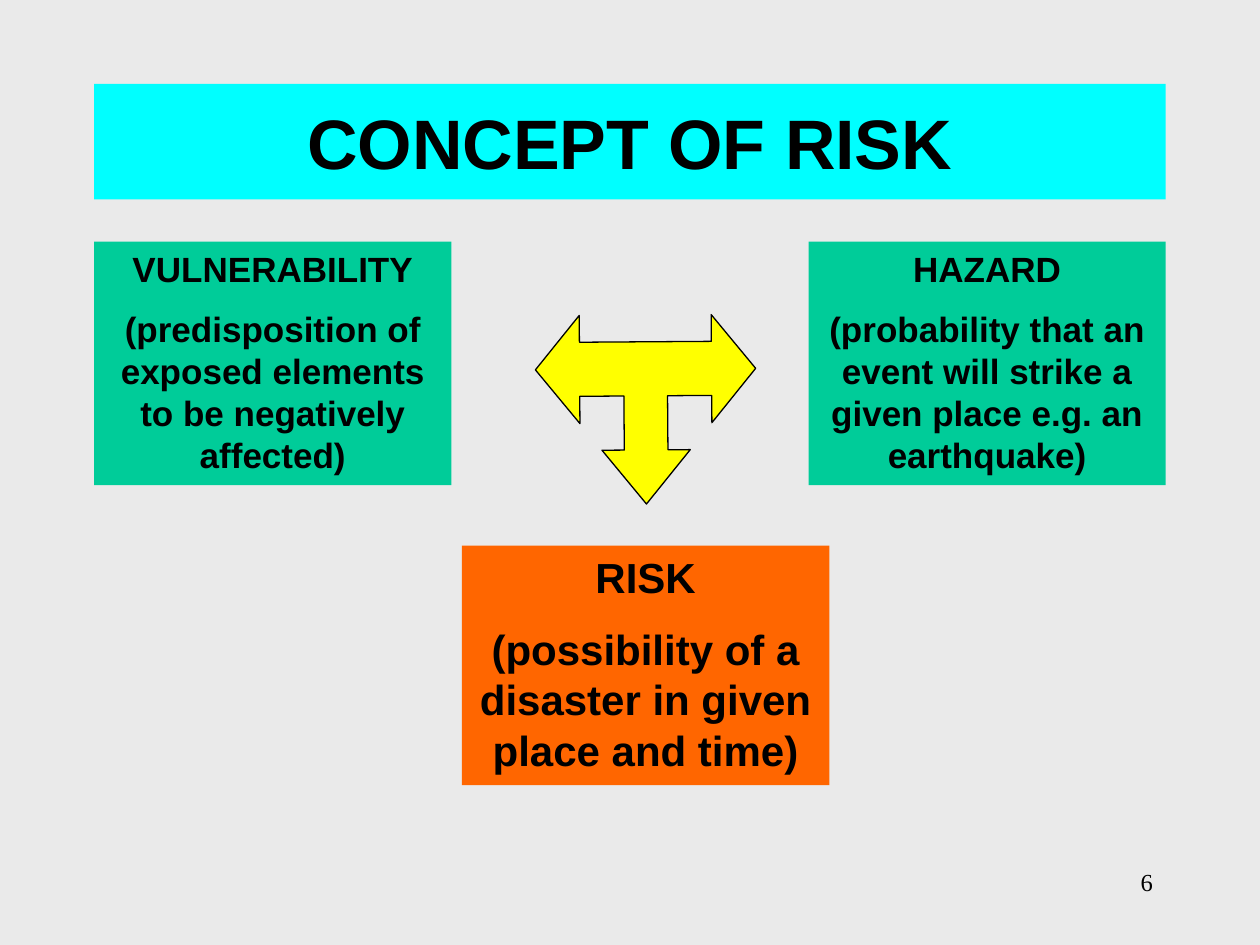
from pptx import Presentation
from pptx.dml.color import RGBColor
from pptx.enum.shapes import MSO_SHAPE
from pptx.enum.text import MSO_ANCHOR, PP_ALIGN
from pptx.util import Cm, Pt

RECTANGLE = MSO_SHAPE.RECTANGLE
TOP, MIDDLE = MSO_ANCHOR.TOP, MSO_ANCHOR.MIDDLE
CENTER, RIGHT = PP_ALIGN.CENTER, PP_ALIGN.RIGHT

BACKGROUND = RGBColor(0xEA, 0xEA, 0xEA)
CYAN = RGBColor(0x00, 0xFF, 0xFF)
GREEN = RGBColor(0x00, 0xCC, 0x99)
ORANGE = RGBColor(0xFF, 0x66, 0x00)
YELLOW = RGBColor(0xFF, 0xFF, 0x00)
BLACK = RGBColor(0x00, 0x00, 0x00)

# Lengths are in centimetres: left, top, width, height.
MARGIN, SLIDE_WIDTH, SLIDE_HEIGHT = 1.9, 25.4, 19.05
FACTOR_TOP, FACTOR_WIDTH, FACTOR_HEIGHT = 4.87, 7.2, 4.91
BOXES = [
    (["CONCEPT OF RISK"], CYAN, 40, MIDDLE,
     (MARGIN, 1.69, SLIDE_WIDTH - 2 * MARGIN, 2.33)),
    (["VULNERABILITY",
      "(predisposition of exposed elements to be negatively affected)"],
     GREEN, 20, TOP, (MARGIN, FACTOR_TOP, FACTOR_WIDTH, FACTOR_HEIGHT)),
    (["HAZARD",
      "(probability that an event will strike a given place e.g. an earthquake)"],
     GREEN, 20, TOP,
     (SLIDE_WIDTH - MARGIN - FACTOR_WIDTH, FACTOR_TOP, FACTOR_WIDTH, FACTOR_HEIGHT)),
    (["RISK", "(possibility of a disaster in given place and time)"],
     ORANGE, 24, TOP, (9.31, 11, 7.41, 4.83)),
]
PAGE_NUMBER, PAGE_NUMBER_PLACE = "6", (18.2, 17.36, 5.29, 1.27)

# Right half of the three-headed arrow: offset from its axis, depth from its top.
ARROW_AXIS, ARROW_TOP, ARROW_TILT = 13.02, 6.35, -0.4
ARROW_HALF = [(0.44, 2.72), (0.44, 1.63), (1.33, 1.63), (1.33, 2.18),
              (2.22, 1.09), (1.33, 0), (1.33, 0.54)]
ARROW_HALF = [(0, 3.81), (0.89, 2.72)] + ARROW_HALF


def write(frame, texts, alignment, **font_format):
    frame.word_wrap = True
    for index, text in enumerate(texts):
        paragraph = frame.paragraphs[0] if index == 0 else frame.add_paragraph()
        paragraph.alignment = alignment
        if index:
            paragraph.space_before = font_format["size"] // 2
        run = paragraph.add_run()
        run.text = text
        run.font.color.rgb = BLACK
        for name, value in font_format.items():
            setattr(run.font, name, value)


def add_box(slide, texts, color, size, anchor, place):
    box = slide.shapes.add_shape(RECTANGLE, *map(Cm, place))
    box.shadow.inherit = False
    box.fill.solid()
    box.fill.fore_color.rgb = color
    box.line.fill.background()
    box.text_frame.vertical_anchor = anchor
    write(box.text_frame, texts, CENTER, size=Pt(size), name="Arial", bold=True)


def add_three_headed_arrow(slide):
    mirrored = [(-offset, depth) for offset, depth in reversed(ARROW_HALF[1:])]
    points = [(Cm(ARROW_AXIS + offset), Cm(ARROW_TOP + depth))
              for offset, depth in ARROW_HALF + mirrored]
    builder = slide.shapes.build_freeform(*points[0])
    builder.add_line_segments(points[1:], close=True)
    arrow = builder.convert_to_shape()
    arrow.shadow.inherit = False
    arrow.rotation = ARROW_TILT
    arrow.fill.solid()
    arrow.fill.fore_color.rgb = YELLOW
    arrow.line.color.rgb = BLACK
    arrow.line.width = Pt(0.75)


def main():
    presentation = Presentation()
    presentation.slide_width = Cm(SLIDE_WIDTH)
    presentation.slide_height = Cm(SLIDE_HEIGHT)
    slide = presentation.slides.add_slide(presentation.slide_layouts[6])
    slide.background.fill.solid()
    slide.background.fill.fore_color.rgb = BACKGROUND

    page_number = slide.shapes.add_textbox(*map(Cm, PAGE_NUMBER_PLACE))
    write(page_number.text_frame, [PAGE_NUMBER], RIGHT,
          size=Pt(14), name="Times New Roman")
    for box in BOXES:
        add_box(slide, *box)
    add_three_headed_arrow(slide)
    presentation.save("out.pptx")


if __name__ == "__main__":
    main()
